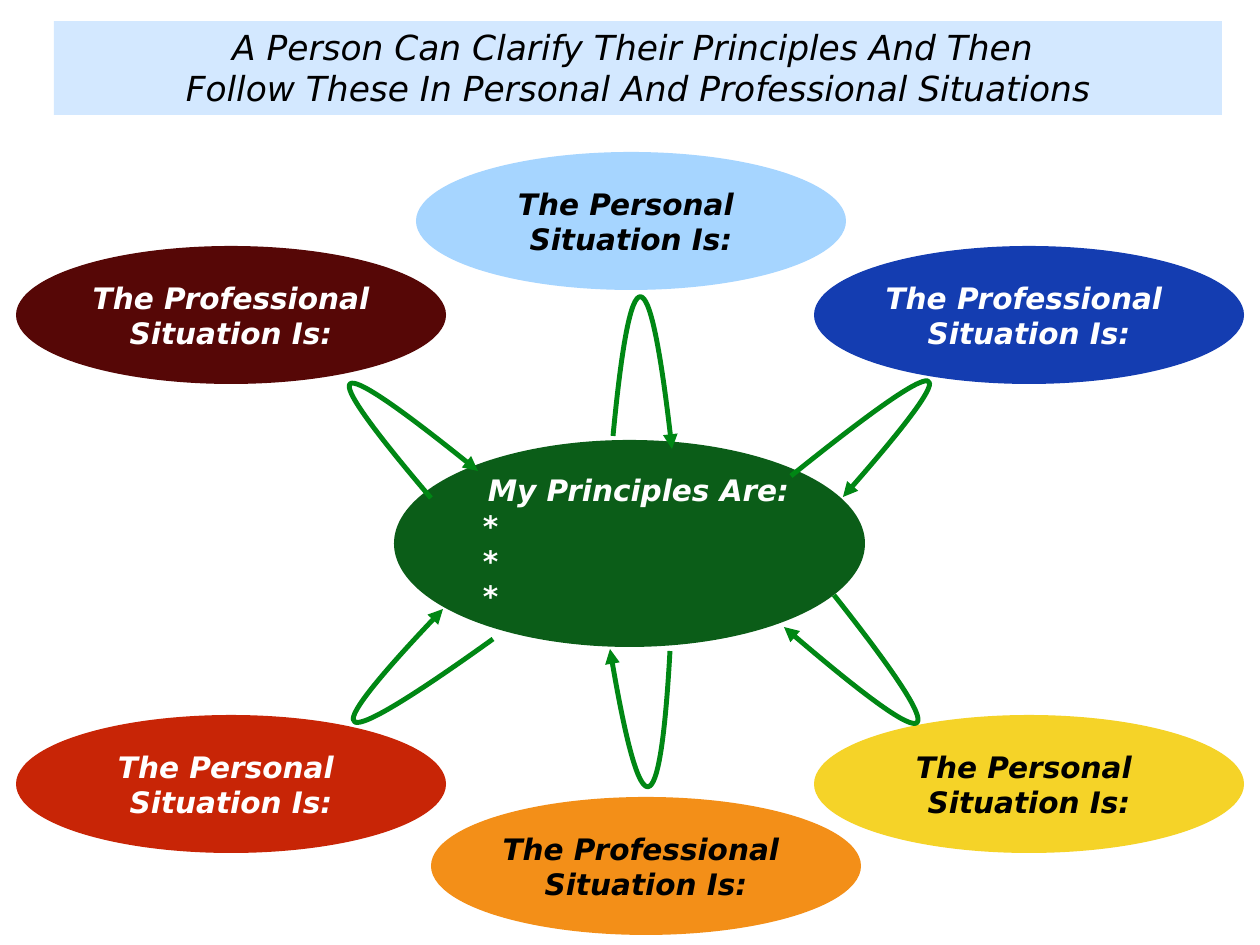
from pptx import Presentation
from pptx.dml.color import RGBColor as RGB
from pptx.enum.shapes import MSO_SHAPE as SHAPE
from pptx.enum.text import MSO_ANCHOR as ANCHOR, MSO_AUTO_SIZE as FIT, PP_ALIGN as ALIGN
from pptx.oxml.ns import qn
from pptx.util import Pt
from lxml.etree import SubElement as Sub

PX = 10320
FONT = "DejaVu Sans"
INSET = 5
OVAL_W, OVAL_H = 430, 138
LEFT, RIGHT = 16, 814
UPPER, LOWER = 246, 715

BLACK = RGB(0x00, 0x00, 0x00)
WHITE = RGB(0xFF, 0xFF, 0xFF)
CREAM = RGB(0xFE, 0xFE, 0xFE)
PALE = RGB(0xD3, 0xE8, 0xFF)
SKY = RGB(0xA6, 0xD5, 0xFF)
BLUE = RGB(0x14, 0x3D, 0xB1)
YELLOW = RGB(0xF5, 0xD3, 0x28)
ORANGE = RGB(0xF3, 0x8F, 0x18)
RED = RGB(0xC8, 0x25, 0x06)
MAROON = RGB(0x56, 0x07, 0x06)
FOREST = RGB(0x0B, 0x5D, 0x18)
GREEN = RGB(0x00, 0x87, 0x14)

TITLE = ("A Person Can Clarify Their Principles And Then \n"
         "Follow These In Personal And Professional Situations")
HOME = "The Personal \nSituation Is:"
WORK = "The Professional \nSituation Is:"
WORK_TIGHT = "The Professional\nSituation Is:"
CORE = "My Principles Are:\n*\n*\n*"

OVALS = [
    (416, 152, SKY, HOME, BLACK),
    (RIGHT, UPPER, BLUE, WORK, WHITE),
    (RIGHT, LOWER, YELLOW, HOME, BLACK),
    (431, 797, ORANGE, WORK, BLACK),
    (LEFT, UPPER, MAROON, WORK_TIGHT, WHITE),
    (LEFT, LOWER, RED, HOME, WHITE),
]

LOOPS = [
    [(431, 498), (310, 356), (325, 347), (478, 471)],
    [(791, 476), (955, 344), (972, 351), (843, 497)],
    [(834, 595), (959, 753), (943, 764), (784, 627)],
    [(670, 651), (660, 830), (640, 830), (610, 649)],
    [(493, 639), (327, 758), (310, 748), (443, 609)],
    [(613, 436), (631, 248), (650, 253), (672, 449)],
]


def scale(*nums):
    return [n * PX for n in nums]


def write(frame, text, size, color, bold=True, anchor=ANCHOR.MIDDLE):
    frame.text = text
    frame.vertical_anchor = anchor
    frame.margin_left = frame.margin_right = INSET * PX
    frame.margin_top = frame.margin_bottom = INSET * PX
    for para in frame.paragraphs:
        para.alignment = ALIGN.CENTER
        for run in para.runs:
            font = run.font
            font.name, font.size = FONT, Pt(size)
            font.bold, font.italic = bold, True
            font.color.rgb = color


def add_form(slide, kind, box, fill):
    form = slide.shapes.add_shape(kind, *scale(*box))
    form.shadow.inherit = False
    form.fill.solid()
    form.fill.fore_color.rgb = fill
    form.line.fill.background()
    return form


def add_banner(slide):
    form = add_form(slide, SHAPE.RECTANGLE, (54, 21, 1168, 94), PALE)
    write(form.text_frame, TITLE, 28, BLACK, False, ANCHOR.TOP)


def add_oval(slide, left, top, fill, text, color):
    form = add_form(slide, SHAPE.OVAL, (left, top, OVAL_W, OVAL_H), fill)
    write(form.text_frame, text, 24, color)


def add_core(slide):
    add_form(slide, SHAPE.OVAL, (394, 440, 471, 207), FOREST)
    frame = slide.shapes.add_textbox(*scale(478, 467, 321, 152)).text_frame
    write(frame, CORE, 24, CREAM)
    frame.word_wrap = False
    frame.auto_size = FIT.SHAPE_TO_FIT_TEXT
    for para in frame.paragraphs[1:]:
        para.alignment = ALIGN.LEFT


def bezier(t, a, b, c, d):
    s = 1 - t
    return s**3 * a + 3 * s * s * t * b + 3 * s * t * t * c + t**3 * d


def add_loop(slide, points):
    points = [scale(*point) for point in points]
    steps = [[round(bezier(i / 40, *axis)) for axis in zip(*points)]
             for i in range(41)]
    pen = slide.shapes.build_freeform(*steps[0], scale=1.0)
    pen.add_line_segments(steps[1:], close=False)
    loop = pen.convert_to_shape()
    loop.shadow.inherit = False
    loop.fill.background()
    loop.line.color.rgb = GREEN
    loop.line.width = Pt(4)
    Sub(loop.line._get_or_add_ln(), qn("a:tailEnd"), type="triangle")

    route = next(loop._element.iter(qn("a:path")))
    for line in route.findall(qn("a:lnTo")):
        route.remove(line)
    curve = Sub(route, qn("a:cubicBezTo"))
    for x, y in points[1:]:
        Sub(curve, qn("a:pt"), x=str(x - loop.left), y=str(y - loop.top))


def main():
    deck = Presentation()
    deck.slide_width, deck.slide_height = scale(1260, 945)
    slide = deck.slides.add_slide(deck.slide_layouts[6])
    add_core(slide)
    add_banner(slide)
    for oval in OVALS:
        add_oval(slide, *oval)
    for points in LOOPS:
        add_loop(slide, points)
    deck.save("out.pptx")


if __name__ == "__main__":
    main()
